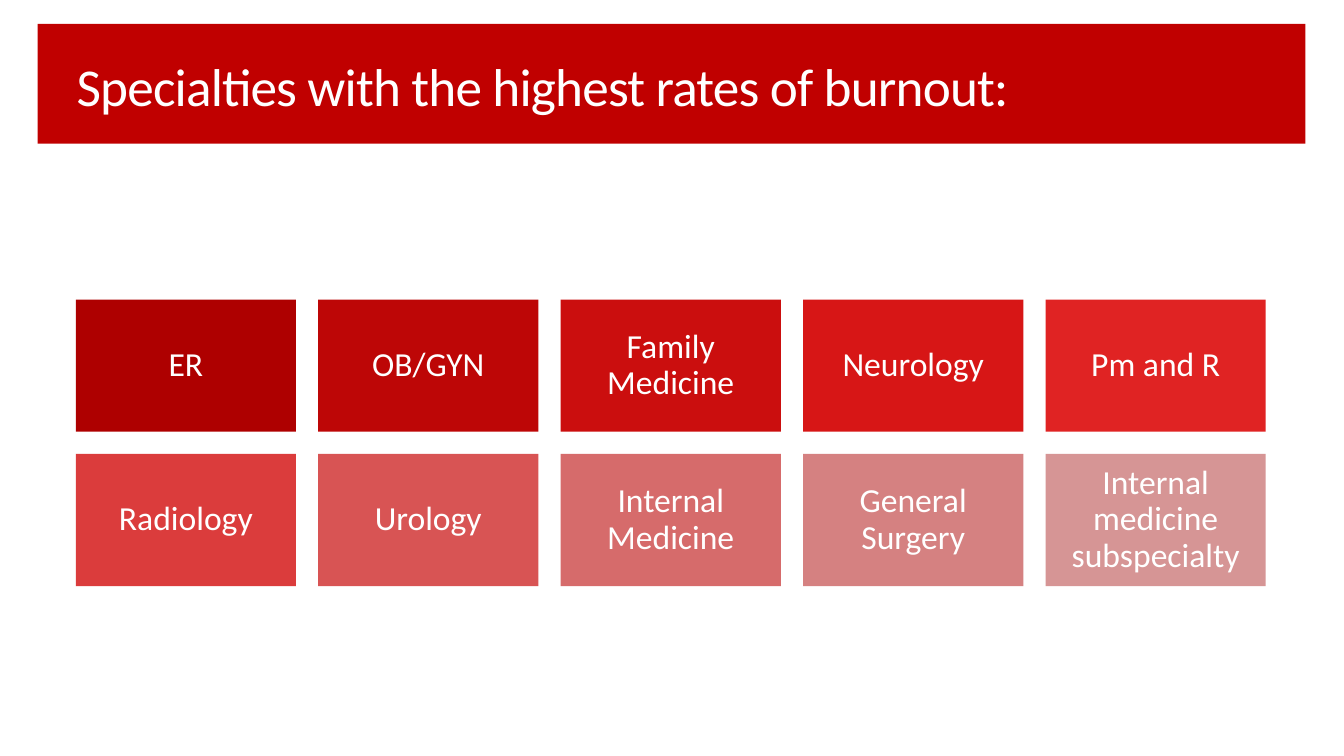
import pptx
import pptx.util
import pptx.dml.color
import pptx.enum.shapes
import pptx.enum.text
from dataclasses import dataclass

TITLE = "Specialties with the highest rates of burnout:"
SPECIALTIES = [
    ("ER", "AE0000"),
    ("OB/GYN", "BD0606"),
    ("Family Medicine", "CB0E0E"),
    ("Neurology", "D71616"),
    ("Pm and R", "E02323"),
    ("Radiology", "DB3C3C"),
    ("Urology", "D85454"),
    ("Internal Medicine", "D66B6B"),
    ("General Surgery", "D58181"),
    ("Internal medicine subspecialty", "D69595"),
]


@dataclass(frozen=True)
class Theme:
    font: str = "Calibri"
    banner: str = "C00000"
    text: str = "FFFFFF"
    title_size: int = 38
    tile_size: int = 24


THEME = Theme()
Cm = pptx.util.Cm
ALIGN = pptx.enum.text.PP_ALIGN
ANCHOR = pptx.enum.text.MSO_ANCHOR

BANNER = (0.95, 0.6, 31.95, 3.02)
TITLE_BOX = (1.68, 1.4, 29.97, 3.2)
COLUMNS = 5
GRID_LEFT, GRID_TOP = 1.91, 7.55
TILE_WIDTH, TILE_HEIGHT, GAP = 5.55, 3.33, 0.56


def rgb(value):
    return pptx.dml.color.RGBColor.from_string(value)


def set_all(target, values):
    for name, value in values.items():
        setattr(target, name, value)


def write(shape, text, size, align, anchor, inset):
    tf = shape.text_frame
    set_all(tf, {
        "word_wrap": True,
        "auto_size": pptx.enum.text.MSO_AUTO_SIZE.NONE,
        "vertical_anchor": anchor,
        "margin_left": Cm(0.25),
        "margin_right": Cm(0.25),
        "margin_top": Cm(inset),
        "margin_bottom": Cm(inset),
    })
    p = tf.paragraphs[0]
    set_all(p, {"alignment": align, "line_spacing": 0.9})
    r = p.add_run()
    r.text = text
    set_all(r.font, {"name": THEME.font, "size": pptx.util.Pt(size)})
    r.font.color.rgb = rgb(THEME.text)
    return r


def add_block(s, box, color):
    block = s.shapes.add_shape(
        pptx.enum.shapes.MSO_SHAPE.RECTANGLE, *map(Cm, box))
    block.shadow.inherit = False
    block.fill.solid()
    block.fill.fore_color.rgb = rgb(color)
    block.line.fill.background()
    return block


def main():
    prs = pptx.Presentation()
    set_all(prs, {"slide_width": Cm(33.87), "slide_height": Cm(19.05)})
    s = prs.slides.add_slide(prs.slide_layouts[5])

    title = s.shapes.title
    set_all(title, dict(zip(("left", "top", "width", "height"), map(Cm, TITLE_BOX))))
    r = write(title, TITLE, THEME.title_size, ALIGN.LEFT, ANCHOR.TOP, 0.13)
    r.font._element.set("spc", "-60")
    banner = add_block(s, BANNER, THEME.banner)
    title.element.addprevious(banner.element)

    for i, (name, color) in enumerate(SPECIALTIES):
        row, column = divmod(i, COLUMNS)
        left = GRID_LEFT + column * (TILE_WIDTH + GAP)
        top = GRID_TOP + row * (TILE_HEIGHT + GAP)
        tile = add_block(s, (left, top, TILE_WIDTH, TILE_HEIGHT), color)
        write(tile, name, THEME.tile_size, ALIGN.CENTER, ANCHOR.MIDDLE, 0.25)

    prs.save("out.pptx")


if __name__ == "__main__":
    main()
